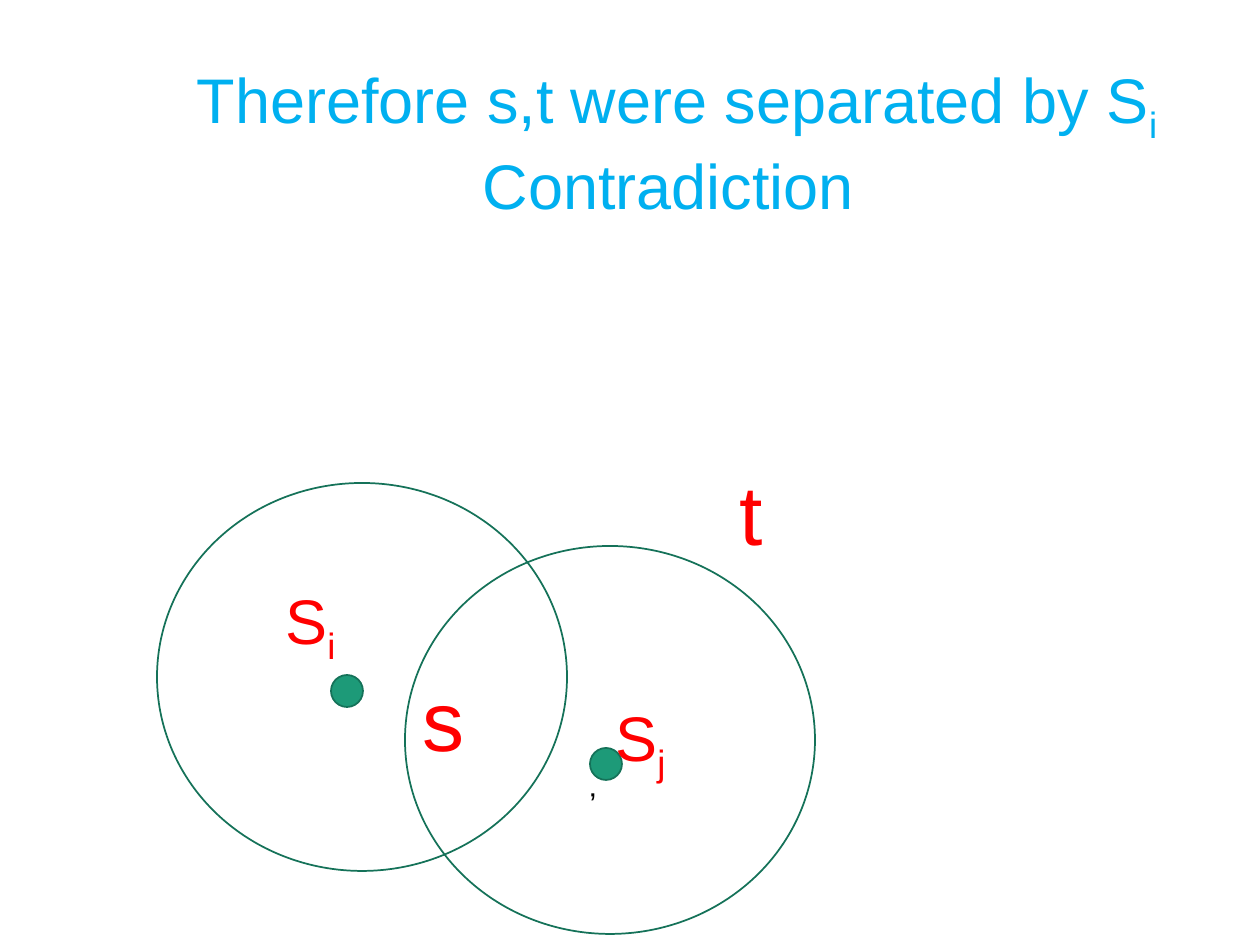
import pptx
import pptx.util
import pptx.dml.color
import pptx.enum.shapes
import pptx.enum.text

PX = 914400 // 126
SIZE = (1260, 945)
ALIGN = pptx.enum.text.PP_ALIGN
THEME = {
    "font": "Arial",
    "title": "00B0F0", "label": "FF0000", "mark": "000000",
    "dot": "1D9A78", "line": "157259",
    "small": 18, "medium": 36, "large": 48,
}

SET_SIZE = (410, 388)
DOT_SIZE = (32, 32)
SETS = [(157, 483), (405, 546)]
DOTS = [(331, 675), (590, 748)]

# A paragraph is (text, subscript, size, colour, alignment, left indent).
TEXTS = [
    ((126, 54, 1102, 318), [
        ("Therefore s,t were separated by S", "i", "medium", "title", ALIGN.CENTER, 0),
        ("Contradiction ", "", "medium", "title", ALIGN.CENTER, 0)]),
    ((273, 575, 168, 89), [("S", "i", "medium", "label", ALIGN.LEFT, 0)]),
    ((577, 692, 388, 127), [
        ("S", "j", "medium", "label", ALIGN.LEFT, 26),
        ("’", "", "small", "mark", ALIGN.LEFT, 0)]),
    ((410, 661, 168, 115), [("s", "", "large", "label", ALIGN.LEFT, 0)]),
    ((727, 455, 168, 115), [("t", "", "large", "label", ALIGN.LEFT, 0)]),
]


def emu(lengths):
    return [n * PX for n in lengths]


def rgb(name):
    return pptx.dml.color.RGBColor.from_string(THEME[name])


def add_circle(s, at, size, fill=None):
    sp = s.shapes.add_shape(pptx.enum.shapes.MSO_SHAPE.OVAL, *emu(at + size))
    sp.shadow.inherit = False
    if fill:
        sp.fill.solid()
        sp.fill.fore_color.rgb = rgb(fill)
    else:
        sp.fill.background()
    sp.line.color.rgb = rgb("line")
    sp.line.width = pptx.util.Pt(1)


def add_run(p, text, size, color, subscript=False):
    r = p.add_run()
    r.text = text
    formats = {"name": THEME["font"], "size": pptx.util.Pt(THEME[size])}
    for key, value in formats.items():
        setattr(r.font, key, value)
    r.font.color.rgb = rgb(color)
    if subscript:
        r.font._element.set("baseline", "-25000")


def add_text(s, box, paragraphs):
    tf = s.shapes.add_textbox(*emu(box)).text_frame
    tf.word_wrap = True
    for i, (text, sub, size, color, align, indent) in enumerate(paragraphs):
        p = tf.add_paragraph() if i else tf.paragraphs[0]
        p.alignment = align
        if indent:
            p._p.get_or_add_pPr().set("marL", str(indent * PX))
        add_run(p, text, size, color)
        if sub:
            add_run(p, sub, size, color, subscript=True)


def main():
    prs = pptx.Presentation()
    prs.slide_width, prs.slide_height = emu(SIZE)
    s = prs.slides.add_slide(prs.slide_layouts[6])
    for at in SETS:
        add_circle(s, at, SET_SIZE)
    for at in DOTS:
        add_circle(s, at, DOT_SIZE, "dot")
    for box, paragraphs in TEXTS:
        add_text(s, box, paragraphs)
    prs.save("out.pptx")


if __name__ == "__main__":
    main()
